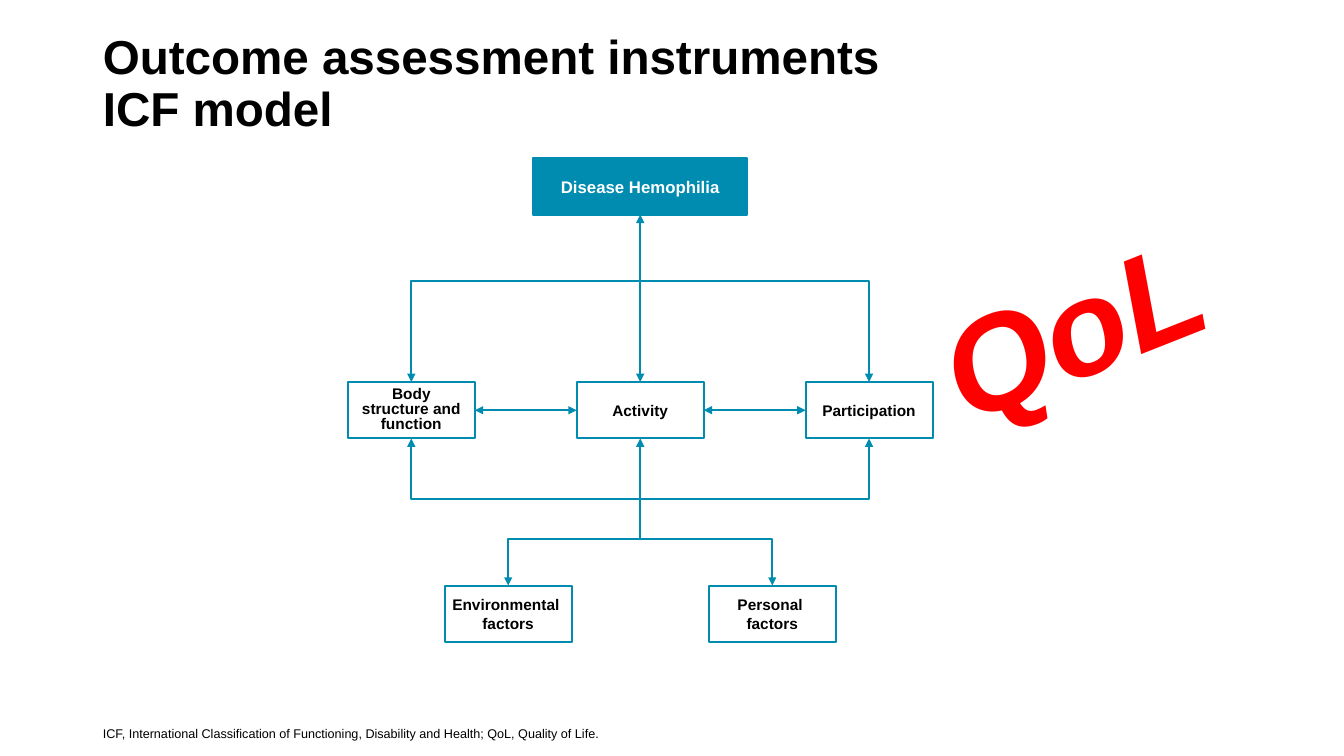
from lxml import etree
from pptx import Presentation
from pptx import util as u
from pptx.dml.color import RGBColor
from pptx.enum import shapes, text
from pptx.oxml import ns

COLORS = {"teal": "008BB0", "white": "FFFFFF", "black": "000000", "red": "FF0000"}
FONT = "Arial"
COLS, ROWS = 58, 48  # grid of the diagram
BOX_W, BOX_H = 12.6, 5.6


def rgb(name):
    return RGBColor.from_string(COLORS[name])


def add_text(p, lines, size, color="black", bold=True, italic=False):
    for i, line in enumerate(lines):
        if i:
            p.add_line_break()
        r = p.add_run()
        r.text = line
        r.font.name, r.font.size = FONT, u.Pt(size)
        r.font.bold, r.font.italic = bold, italic
        r.font.color.rgb = rgb(color)


def place(sp, left, top, width, height):
    sp.left, sp.top, sp.width, sp.height = (u.Inches(v) for v in (left, top, width, height))


def style_line(sp, head=False, tail=False):
    sp.line.color.rgb, sp.line.width = rgb("teal"), u.Pt(1.5)
    ln = sp.line._get_or_add_ln()
    for tag, wanted in (("a:headEnd", head), ("a:tailEnd", tail)):
        if wanted:
            etree.SubElement(ln, ns.qn(tag), type="triangle")


def add_title(s, left, top, width, height):
    sp = s.shapes.title
    place(sp, left, top, width, height)
    tf = sp.text_frame
    tf.auto_size, tf.vertical_anchor = text.MSO_AUTO_SIZE.NONE, text.MSO_ANCHOR.MIDDLE
    p = tf.paragraphs[0]
    p.alignment, p.line_spacing = text.PP_ALIGN.LEFT, 0.9
    add_text(p, ["Outcome assessment instruments ", "ICF model"], 34)


def add_footnote(s, left, top, width, height):
    sp = s.placeholders[1]
    place(sp, left, top, width, height)
    tf = sp.text_frame
    tf.auto_size, tf.vertical_anchor = text.MSO_AUTO_SIZE.NONE, text.MSO_ANCHOR.BOTTOM
    tf.margin_bottom = 0
    p = tf.paragraphs[0]
    pPr = p._p.get_or_add_pPr()
    pPr.set("marL", "0")
    pPr.set("indent", "0")
    etree.SubElement(pPr, ns.qn("a:buNone"))
    p.space_before = u.Pt(0)
    add_text(p, ["ICF, International Classification of Functioning, Disability and Health; "
                 "QoL, Quality of Life."], 9, bold=False)


def add_diagram(s, left, top, width, height):
    mid, side, factor = COLS / 2, 22.7, 13.1
    level, factor_row = 22.2, ROWS - BOX_H
    upper_bar, lower_bar, factor_bar = 12.2, 33.8, 37.8

    def x(col):
        return u.Inches(left + width * col / COLS)

    def y(row):
        return u.Inches(top + height * row / ROWS)

    def box(center, row, lines, w=BOX_W, fill="white", color="black", size=11,
            spacing=None, margin=0.1):
        sp = s.shapes.add_shape(shapes.MSO_SHAPE.RECTANGLE, x(center - w / 2), y(row),
                                x(w) - x(0), y(BOX_H) - y(0))
        sp.shadow.inherit = False
        sp.fill.solid()
        sp.fill.fore_color.rgb = rgb(fill)
        style_line(sp)
        tf = sp.text_frame
        tf.word_wrap, tf.vertical_anchor = True, text.MSO_ANCHOR.MIDDLE
        tf.margin_left = tf.margin_right = u.Inches(margin)
        p = tf.paragraphs[0]
        p.alignment = text.PP_ALIGN.CENTER
        if spacing:
            p.line_spacing = spacing
        add_text(p, lines, size, color)
        return sp

    def connect(start, start_side, end=None, end_side=0, tail=True):
        c = s.shapes.add_connector(shapes.MSO_CONNECTOR.STRAIGHT,
                                   x(mid), y(level + BOX_H), x(mid), y(factor_bar))
        c.begin_connect(start, start_side)
        if end is not None:
            c.end_connect(end, end_side)
        etree.SubElement(c._element.spPr, ns.qn("a:effectLst"))
        style_line(c, head=True, tail=tail)

    def elbow(offset, bar, end):
        fb = s.shapes.build_freeform(x(mid), y(bar))
        fb.add_line_segments([(x(mid + offset), y(bar)), (x(mid + offset), y(end))],
                             close=False)
        sp = fb.convert_to_shape()
        sp.shadow.inherit = False
        sp.fill.background()
        style_line(sp, tail=True)

    disease = box(mid, 0, ["Disease Hemophilia"], w=21.2, fill="teal", color="white", size=12)
    body = box(mid - side, level, ["Body structure and function"], spacing=0.8)
    activity = box(mid, level, ["Activity"])
    participation = box(mid + side, level, ["Participation"])
    box(mid - factor, factor_row, ["Environmental ", "factors"], margin=0)
    box(mid + factor, factor_row, ["Personal ", "factors"])

    connect(disease, 2, activity, 0)
    connect(body, 3, activity, 1)
    connect(activity, 3, participation, 1)
    connect(activity, 2, tail=False)
    for sign in (-1, 1):
        elbow(sign * side, upper_bar, level)
        elbow(sign * side, lower_bar, level + BOX_H)
        elbow(sign * factor, factor_bar, factor_row)


def add_qol(s, left, top, width, height):
    sp = s.shapes.add_textbox(*(u.Inches(v) for v in (left, top, width, height)))
    sp.rotation = 338.3
    tf = sp.text_frame
    tf.word_wrap = True
    add_text(tf.paragraphs[0], ["QoL"], 96, "red", italic=True)


def main():
    prs = Presentation()
    prs.slide_width, prs.slide_height = u.Inches(13.33), u.Inches(7.5)
    s = prs.slides.add_slide(prs.slide_layouts[1])
    add_title(s, 0.92, 0.25, 11.5, 1.19)
    add_footnote(s, 0.92, 6.95, 10.85, 0.4)
    add_diagram(s, 3.45, 1.57, 5.8, 4.8)
    add_qol(s, 9.18, 2.29, 3.31, 1.72)
    prs.save("out.pptx")


if __name__ == "__main__":
    main()
